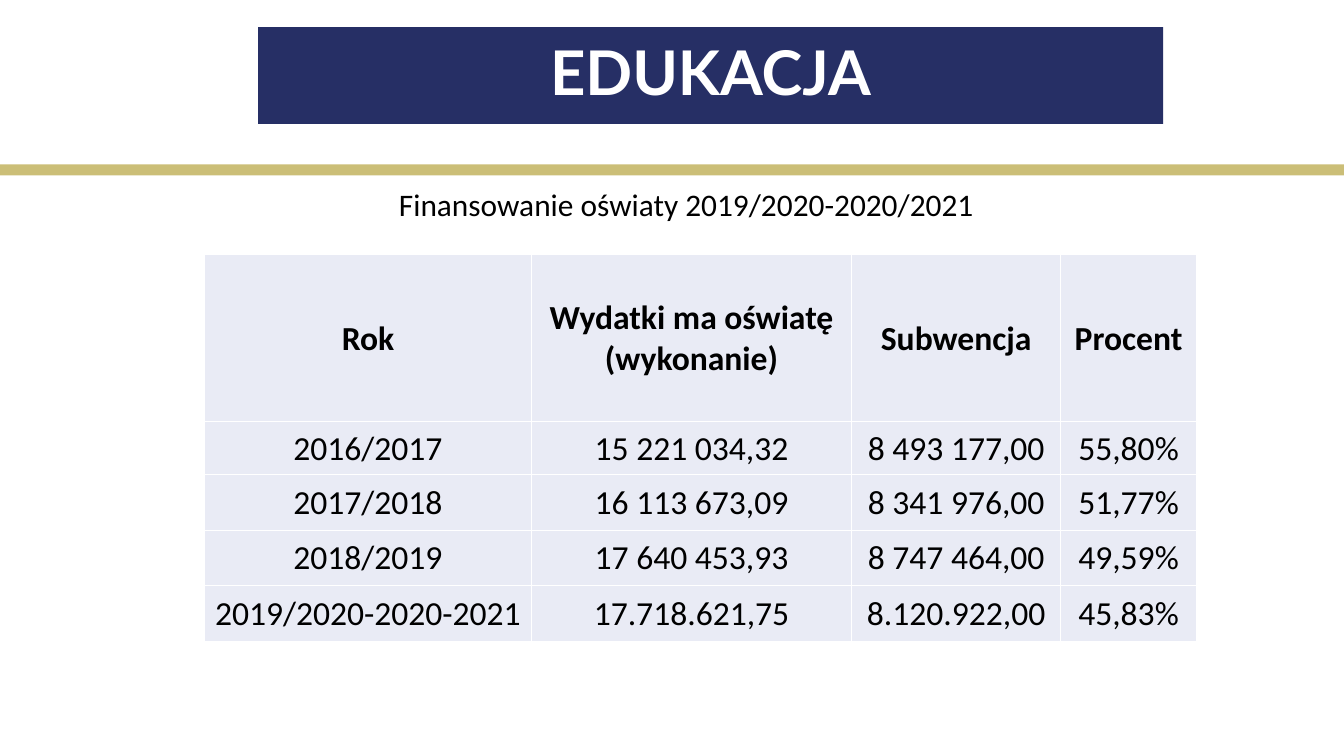
import dataclasses

import lxml.etree
import pptx
import pptx.dml.color
import pptx.enum.shapes
import pptx.enum.text
import pptx.oxml.ns
import pptx.util

Pt = pptx.util.Pt
CENTER = pptx.enum.text.PP_ALIGN.CENTER
MIDDLE = pptx.enum.text.MSO_ANCHOR.MIDDLE


@dataclasses.dataclass(frozen=True)
class Theme:
    navy: str = "262F65"
    gold: str = "CBBE77"
    cell: str = "E9EBF5"
    white: str = "FFFFFF"
    black: str = "000000"
    title_font: str = "Lato"
    body_font: str = "Calibri"
    title_size: float = 44
    subtitle_size: float = 22.4
    table_size: float = 24
    border_width: float = 1


THEME = Theme()
COLUMN_WIDTHS = [233.3, 229, 149.1, 97.2]
ROW_HEIGHTS = [119, 38.2, 39.6, 39.6, 39.6]
FUNDING = [
    ["Rok", "Wydatki ma oświatę (wykonanie)", "Subwencja", "Procent"],
    ["2016/2017", "15 221 034,32", "8 493 177,00", "55,80%"],
    ["2017/2018", "16 113 673,09", "8 341 976,00", "51,77%"],
    ["2018/2019", "17 640 453,93", "8 747 464,00", "49,59%"],
    ["2019/2020-2020-2021", "17.718.621,75", "8.120.922,00", "45,83%"],
]


def color(value):
    return pptx.dml.color.RGBColor.from_string(value)


def set_font(paragraph, name, size, value, bold=False):
    font = paragraph.font
    font.name = name
    font.size = Pt(size)
    font.bold = bold
    font.color.rgb = color(value)


def add_rectangle(slide, box, fill):
    shape = slide.shapes.add_shape(
        pptx.enum.shapes.MSO_SHAPE.RECTANGLE, *map(Pt, box))
    shape.shadow.inherit = False
    shape.fill.solid()
    shape.fill.fore_color.rgb = color(fill)
    shape.line.fill.background()
    return shape


def add_title(slide, box, text):
    shape = add_rectangle(slide, box, THEME.navy)
    shape.text_frame.vertical_anchor = MIDDLE
    paragraph = shape.text_frame.paragraphs[0]
    paragraph.text = text
    paragraph.alignment = CENTER
    paragraph.line_spacing = 0.9
    set_font(paragraph, THEME.title_font, THEME.title_size, THEME.white, True)


def add_subtitle(slide, box, text):
    text_frame = slide.shapes.add_textbox(*map(Pt, box)).text_frame
    text_frame.word_wrap = True
    paragraph = text_frame.paragraphs[0]
    paragraph.text = text
    paragraph.line_spacing = 0.7
    set_font(paragraph, THEME.body_font, THEME.subtitle_size, THEME.black)


def add_borders(cell):
    properties = cell._tc.get_or_add_tcPr()
    qualify = pptx.oxml.ns.qn
    for side in ("a:lnL", "a:lnR", "a:lnT", "a:lnB"):
        line = lxml.etree.SubElement(
            properties, qualify(side), w=str(Pt(THEME.border_width)))
        fill = lxml.etree.SubElement(line, qualify("a:solidFill"))
        lxml.etree.SubElement(fill, qualify("a:srgbClr"), val=THEME.white)


def style_cell(cell, text, bold):
    add_borders(cell)
    cell.fill.solid()
    cell.fill.fore_color.rgb = color(THEME.cell)
    cell.vertical_anchor = MIDDLE
    cell.margin_left = cell.margin_right = cell.margin_top = Pt(0.7)
    cell.margin_bottom = Pt(0)
    paragraph = cell.text_frame.paragraphs[0]
    paragraph.text = text
    paragraph.alignment = CENTER
    set_font(paragraph, THEME.body_font, THEME.table_size, THEME.black, bold)


def add_funding_table(slide, left, top):
    table = slide.shapes.add_table(
        len(ROW_HEIGHTS), len(COLUMN_WIDTHS), Pt(left), Pt(top),
        Pt(sum(COLUMN_WIDTHS)), Pt(sum(ROW_HEIGHTS))).table
    for column, width in zip(table.columns, COLUMN_WIDTHS):
        column.width = Pt(width)
    for row_index, (row, height) in enumerate(zip(table.rows, ROW_HEIGHTS)):
        row.height = Pt(height)
        for cell, text in zip(row.cells, FUNDING[row_index]):
            style_cell(cell, text, row_index == 0)


def main():
    presentation = pptx.Presentation()
    presentation.slide_width = Pt(960)
    presentation.slide_height = Pt(540)
    slide = presentation.slides.add_slide(presentation.slide_layouts[6])
    add_rectangle(slide, (0, 117.4, 986, 8), THEME.gold)
    add_title(slide, (184.3, 19.4, 646.6, 69.1), "EDUKACJA")
    add_subtitle(slide, (277.9, 136.1, 460, 38.2),
                 "Finansowanie oświaty 2019/2020-2020/2021")
    add_funding_table(slide, 146.2, 182)
    presentation.save("out.pptx")


if __name__ == "__main__":
    main()
